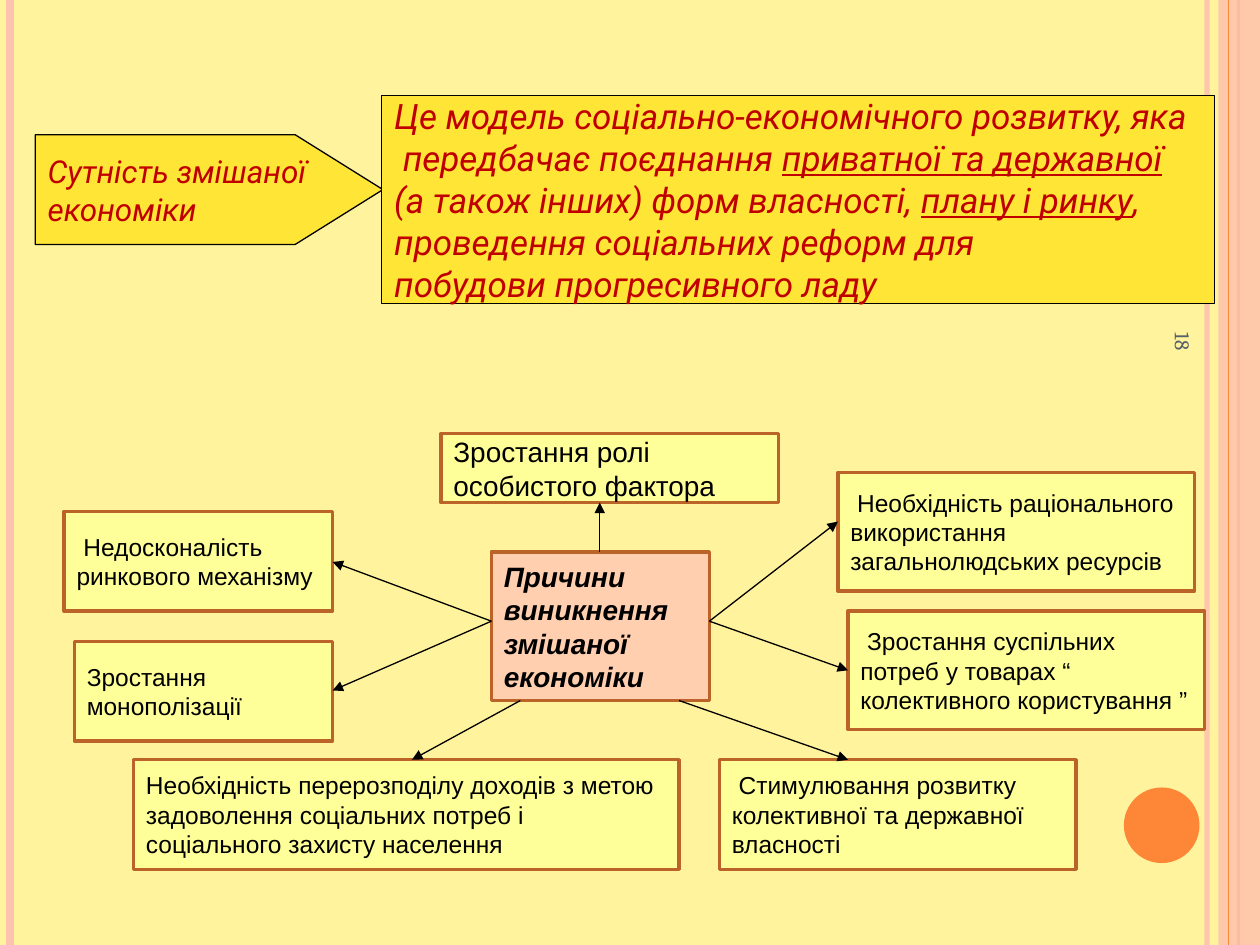
"""Build a slide on the essence and causes of the mixed economy."""
from lxml import etree
from pptx import Presentation
from pptx.dml.color import RGBColor
from pptx.enum.shapes import MSO_CONNECTOR, MSO_SHAPE
from pptx.enum.text import MSO_ANCHOR, PP_ALIGN
from pptx.oxml.ns import qn
from pptx.util import Inches, Pt

RECTANGLE = MSO_SHAPE.RECTANGLE
PENTAGON = MSO_SHAPE.PENTAGON
OVAL = MSO_SHAPE.OVAL
STRAIGHT = MSO_CONNECTOR.STRAIGHT
LEFT = PP_ALIGN.LEFT
MIDDLE = MSO_ANCHOR.MIDDLE

CREAM = RGBColor(0xFF, 0xF3, 0x9D)
PINK = RGBColor(0xFE, 0xC3, 0xAE)
ORANGE = RGBColor(0xFE, 0x86, 0x37)
PALE_YELLOW = RGBColor(0xFF, 0xFF, 0x99)
PEACH = RGBColor(0xFF, 0xCF, 0xAF)
YELLOW = RGBColor(0xFF, 0xE6, 0x36)
BROWN = RGBColor(0xBC, 0x63, 0x29)
RED = RGBColor(0xC0, 0x00, 0x00)
GREY = RGBColor(0x57, 0x5F, 0x6D)
BLACK = RGBColor(0x00, 0x00, 0x00)

DEFINITION = [
    "Це модель соціально-економічного розвитку, яка",
    " передбачає поєднання _приватної та державної_",
    "(а також інших) форм власності, _плану і ринку_,",
    "проведення соціальних реформ для",
    "побудови прогресивного ладу",
]
CAUSES = [
    ("Зростання ролі особистого фактора", (3.5, 3.44, 2.68, 0.55), 16),
    (" Недосконалість ринкового механізму", (0.51, 4.06, 2.13, 0.79), 14),
    ("Зростання монополізації", (0.59, 5.09, 2.05, 0.79), 14),
    (" Необхідність раціонального використання загальнолюдських ресурсів",
     (6.65, 3.75, 2.83, 0.94), 14),
    (" Зростання суспільних потреб у товарах “ колективного користування ”",
     (6.73, 4.85, 2.83, 0.94), 14),
    ("Необхідність перерозподілу доходів з метою задоволення соціальних "
     "потреб і соціального захисту населення", (1.06, 6.03, 4.33, 0.87), 14),
    (" Стимулювання розвитку колективної та державної власності",
     (5.71, 6.03, 2.83, 0.87), 14),
]
ARROWS = [
    ((3.9, 4.93), (2.64, 4.46)),
    ((3.9, 4.93), (2.64, 5.48)),
    ((5.63, 4.93), (6.65, 4.14)),
    ((5.63, 4.93), (6.73, 5.32)),
    ((4.76, 4.38), (4.76, 3.99)),
    ((4.13, 5.56), (3.27, 6.03)),
    ((5.39, 5.56), (6.73, 6.03)),
]


def write(box, lines, font="Arial", size=14, color=BLACK, bold=False,
          italic=False, wrap=True):
    """Fill a box with one paragraph per line; underscores enclose underlined words."""
    frame = box.text_frame
    frame.word_wrap = wrap
    frame.vertical_anchor = MIDDLE
    for number, line in enumerate(lines):
        para = frame.add_paragraph() if number else frame.paragraphs[0]
        para.alignment = LEFT
        for part, words in enumerate(line.split("_")):
            if not words:
                continue
            span = para.add_run()
            span.text = words
            span.font.name = font
            span.font.size = Pt(size)
            span.font.color.rgb = color
            span.font.bold = bold
            span.font.italic = italic
            span.font.underline = part % 2 == 1


def set_opacity(element, percent):
    """Make the solid colour inside an element partly transparent."""
    color = next(element.iter(qn("a:srgbClr")))
    etree.SubElement(color, qn("a:alpha"), val=str(percent * 1000))


class SlideBuilder:
    """Hold the style and the current slide."""

    def __init__(self, page, background):
        self.page = page
        fill = page.background.fill
        fill.solid()
        fill.fore_color.rgb = background

    def shape(self, kind, place, fill, outline=None, width=0.75, opacity=100):
        """Add a filled preset shape."""
        box = self.page.shapes.add_shape(kind, *map(Inches, place))
        box.shadow.inherit = False
        box.fill.solid()
        box.fill.fore_color.rgb = fill
        if outline is None:
            box.line.fill.background()
        else:
            box.line.color.rgb = outline
            box.line.width = Pt(width)
        if opacity < 100:
            set_opacity(box.fill._xPr, opacity)
        return box

    def cause(self, text, place, fill=PALE_YELLOW, **style):
        """Add a brown-framed box of the diagram."""
        box = self.shape(RECTANGLE, place, fill, BROWN, 2)
        write(box, [text], **style)

    def line(self, start, end, color=BLACK, width=0.75, opacity=100, arrow=False):
        """Add a straight line, with an arrowhead at its end if asked."""
        line = self.page.shapes.add_connector(
            STRAIGHT, *map(Inches, (*start, *end)))
        line.line.color.rgb = color
        line.line.width = Pt(width)
        properties = line._element.spPr
        outline = properties.find(qn("a:ln"))
        if opacity < 100:
            set_opacity(outline, opacity)
        if arrow:
            etree.SubElement(outline, qn("a:tailEnd"), type="triangle")
        etree.SubElement(properties, qn("a:effectLst"))

    def stripe(self, x, color, width, opacity=100):
        """Add a line over the full height of the slide."""
        self.line((x, 0), (x, 7.5), color, width, opacity)

    def page_number(self, text, place):
        """Add the page number, turned to read downwards."""
        box = self.page.shapes.add_textbox(*map(Inches, place))
        box.rotation = 90
        write(box, [text], font="Cambria", size=12, color=GREY)


def main():
    """Build and save the deck."""
    deck = Presentation()
    deck.slide_width = Inches(10)
    deck.slide_height = Inches(7.5)
    slide = SlideBuilder(deck.slides.add_slide(deck.slide_layouts[6]), CREAM)

    slide.stripe(9.58, PINK, 3, opacity=93)
    slide.stripe(0.08, PINK, 4.5)
    slide.stripe(9.83, ORANGE, 1.5)
    slide.shape(RECTANGLE, (9.67, 0, 0.33, 7.5), PINK, opacity=87)
    slide.stripe(9.75, ORANGE, 0.75)
    slide.shape(OVAL, (8.92, 6.25, 0.6, 0.6), ORANGE)
    slide.page_number("18", (7.64, 4.09, 3.5, 0.4))

    term = slide.shape(PENTAGON, (0.28, 1.07, 2.76, 0.87), YELLOW, BLACK)
    term.adjustments[0] = 0.8
    write(term, ["Сутність змішаної", "економіки"], font="Roboto", size=18,
          color=RED, italic=True, wrap=False)
    definition = slide.shape(RECTANGLE, (3.03, 0.76, 6.61, 1.65), YELLOW, BLACK)
    write(definition, DEFINITION, font="Roboto", size=20, color=RED,
          italic=True, wrap=False)

    slide.cause("Причини виникнення змішаної економіки", (3.9, 4.38, 1.73, 1.18),
                PEACH, size=16, bold=True, italic=True)
    for text, place, size in CAUSES:
        slide.cause(text, place, size=size)
    for start, end in ARROWS:
        slide.line(start, end, arrow=True)

    deck.save("out.pptx")


if __name__ == "__main__":
    main()
